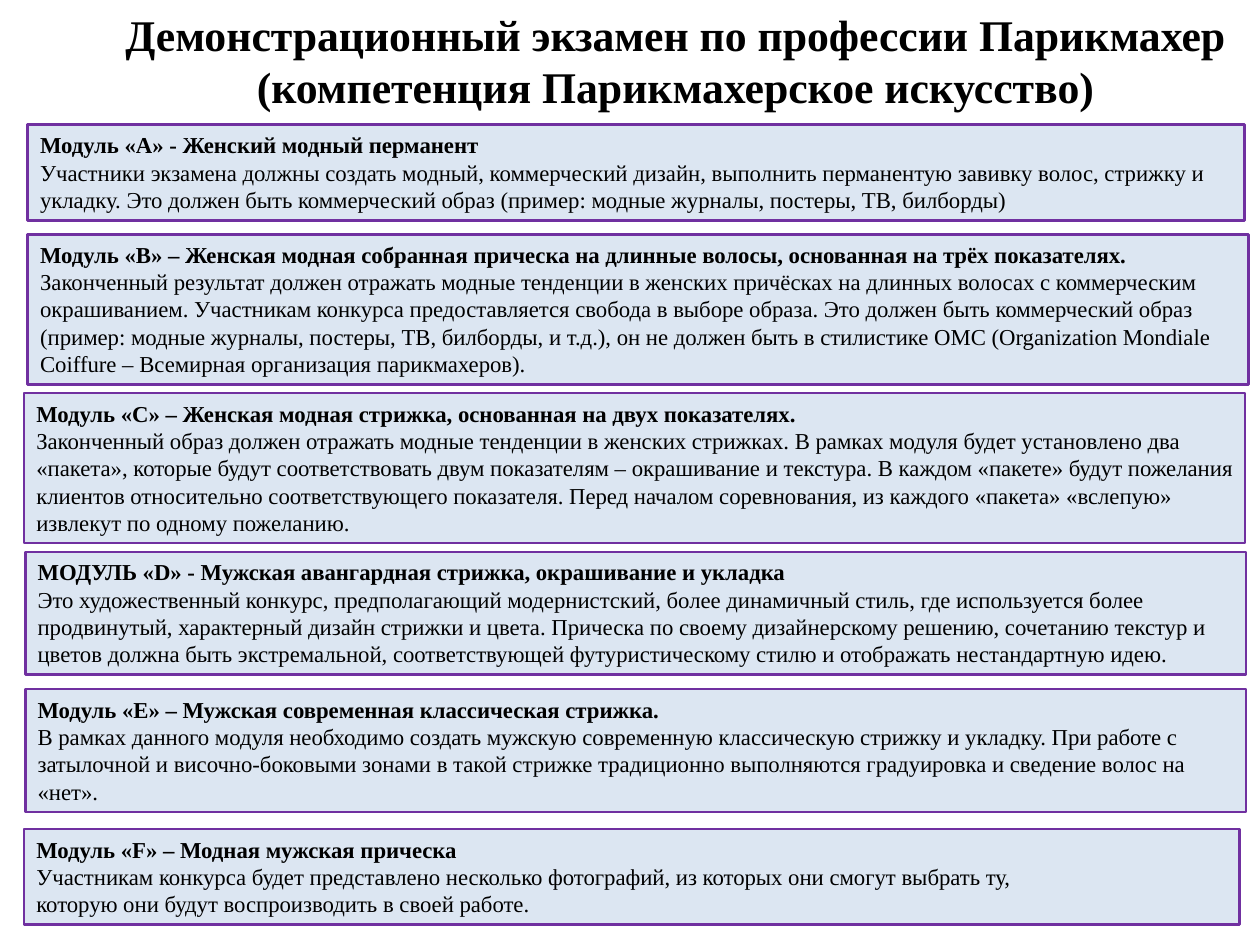
from pptx import Presentation
from pptx import util as u
from pptx.dml.color import RGBColor
from pptx.enum import shapes, text

COLORS = {"ink": "000000", "panel": "DCE6F2", "border": "7030A0"}
FONT = "Times New Roman"
WIDTH, HEIGHT = u.Inches(10), u.Inches(7.5)
COLUMN, ROW = WIDTH / 100, HEIGHT / 75
LINE_ROWS, PADDING_ROWS = 2.16, 1.1

TITLE = "Демонстрационный экзамен по профессии Парикмахер (компетенция Парикмахерское искусство)"

# left column, top row, width in columns, lines of text, heading, body
MODULES = [
    (2.2, 9.9, 96.6, 3, "Модуль «А» - Женский модный перманент",
     "Участники экзамена должны создать модный, коммерческий дизайн, выполнить "
     "перманентую завивку волос, стрижку и укладку. Это должен быть коммерческий "
     "образ (пример: модные журналы, постеры, ТВ, билборды)"),
    (2.2, 18.6, 96.9, 5,
     "Модуль «В» – Женская модная собранная прическа на длинные волосы, "
     "основанная на трёх показателях.",
     "Законченный результат должен отражать модные тенденции в женских причёсках "
     "на длинных волосах с коммерческим окрашиванием. Участникам конкурса "
     "предоставляется свобода в выборе образа. Это должен быть коммерческий образ "
     "(пример: модные журналы, постеры, ТВ, билборды, и т.д.), он не должен быть в "
     "стилистике ОМС (Organization Mondiale Coiffure – Всемирная организация "
     "парикмахеров)."),
    (1.9, 31.2, 96.9, 5,
     "Модуль «С» – Женская модная стрижка, основанная на двух показателях.",
     "Законченный образ должен отражать модные тенденции в женских стрижках. "
     "В рамках модуля будет установлено два «пакета», которые будут соответствовать "
     "двум показателям – окрашивание и текстура. В каждом «пакете» будут пожелания "
     "клиентов относительно соответствующего показателя. Перед началом "
     "соревнования, из каждого «пакета» «вслепую» извлекут по одному пожеланию."),
    (2, 43.8, 96.9, 4,
     "МОДУЛЬ «D» - Мужская авангардная стрижка, окрашивание и укладка",
     "Это художественный конкурс, предполагающий модернистский, более динамичный "
     "стиль, где используется более продвинутый, характерный дизайн стрижки и "
     "цвета. Прическа по своему дизайнерскому решению, сочетанию текстур и цветов "
     "должна быть экстремальной, соответствующей футуристическому стилю и "
     "отображать нестандартную идею."),
    (2, 54.7, 96.9, 4, "Модуль «E» – Мужская современная классическая стрижка.",
     "В рамках данного модуля необходимо создать мужскую современную классическую "
     "стрижку и укладку. При работе с затылочной и височно-боковыми зонами в такой "
     "стрижке традиционно выполняются градуировка и сведение волос на «нет»."),
    (1.9, 65.8, 96.5, 3, "Модуль «F» – Модная мужская прическа",
     "Участникам конкурса будет представлено несколько фотографий, из которых они "
     "смогут выбрать ту,\nкоторую они будут воспроизводить в своей работе."),
]


def color(name):
    return RGBColor.from_string(COLORS[name])


def place(left, top, width, height):
    """Turn columns and rows into whole lengths."""
    return int(left * COLUMN), int(top * ROW), int(width * COLUMN), int(height * ROW)


def add_run(para, words, size, bold):
    span = para.add_run()
    span.text = words
    span.font.name = FONT
    span.font.size = u.Pt(size)
    span.font.bold = bold
    span.font.color.rgb = color("ink")


def add_title(page):
    box = page.shapes.add_textbox(*place(8.7, 0.1, 89.8, 9.4))
    box.text_frame.word_wrap = True
    para = box.text_frame.paragraphs[0]
    para.alignment = text.PP_ALIGN.CENTER
    add_run(para, TITLE, 25, True)


def add_module(page, left, top, width, lines, heading, body):
    height = PADDING_ROWS + lines * LINE_ROWS
    box = page.shapes.add_shape(shapes.MSO_SHAPE.RECTANGLE,
                                *place(left, top, width, height))
    box.shadow.inherit = False
    box.fill.solid()
    box.fill.fore_color.rgb = color("panel")
    box.line.color.rgb = color("border")
    box.line.width = u.Pt(1.5)
    frame = box.text_frame
    frame.word_wrap = True
    frame.vertical_anchor = text.MSO_ANCHOR.TOP
    para = frame.paragraphs[0]
    para.alignment = text.PP_ALIGN.LEFT
    add_run(para, heading, 13, True)
    for line in body.split("\n"):
        para.add_line_break()
        add_run(para, line, 13, False)


def main():
    deck = Presentation()
    deck.slide_width, deck.slide_height = WIDTH, HEIGHT
    page = deck.slides.add_slide(deck.slide_layouts[6])
    add_title(page)
    for module in MODULES:
        add_module(page, *module)
    deck.save("out.pptx")


if __name__ == "__main__":
    main()
